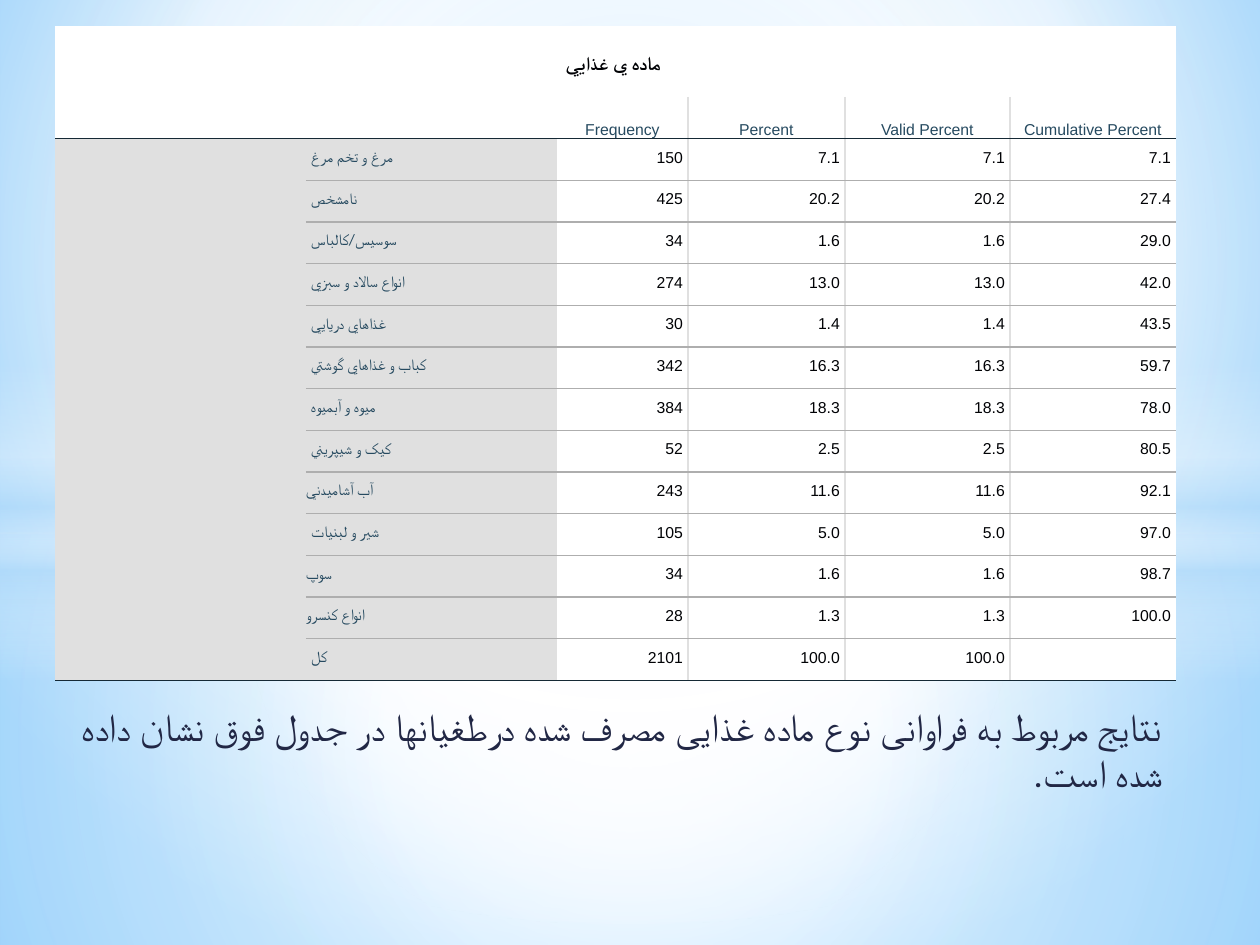
from typing import NamedTuple

from lxml.etree import SubElement
from pptx import Presentation
from pptx.dml.color import RGBColor as Rgb
from pptx.enum.shapes import MSO_SHAPE as Kind
from pptx.enum.text import MSO_ANCHOR as Anchor, MSO_AUTO_SIZE as Fit, PP_ALIGN as Align
from pptx.oxml.ns import qn
from pptx.util import Emu, Pt

INCH = 126  # px to the inch
DARK, GREY, PALE, WHITE = "152935", "AEAEAE", "E0E0E0", "FFFFFF"
BLACK, BLUE, NAVY, SKY = "010205", "264A60", "212745", "B4DCFA"
MID = (50, 50, 50, 50)


class Stop(NamedTuple):
    pos: int
    hue: str
    alpha: int = 100


class Panel(NamedTuple):
    kind: Kind
    top: int
    high: int
    stops: list[Stop]
    focus: tuple | None = MID


class Food(NamedTuple):
    name: str
    count: str
    share: str
    total: str
    inset: int = 5


class Style(NamedTuple):
    font: str
    size: int
    hue: str
    bold: bool = False


TITLE = Style("Calibri", 11, BLACK, True)
HEAD = Style("Arial", 9, BLUE)
LABEL = Style("Calibri", 9, BLUE)
VALUE = Style("Arial", 9, BLACK)
NOTE = Style("Roboto", 22, NAVY)

PANELS = [
    Panel(Kind.RECTANGLE, 533, 412, [Stop(0, WHITE, 91), Stop(37, WHITE, 76), Stop(100, SKY, 79)]),
    Panel(Kind.RECTANGLE, 0, 533, [Stop(0, WHITE, 89), Stop(48, WHITE, 62), Stop(100, SKY, 79)]),
    Panel(Kind.RECTANGLE, 365, 315,
          [Stop(0, WHITE, 0), Stop(29, WHITE, 30), Stop(45, SKY, 40),
           Stop(55, WHITE, 26), Stop(65, SKY, 60), Stop(100, WHITE, 0)], None),
    Panel(Kind.OVAL, 221, 703, [Stop(0, WHITE), Stop(54, WHITE, 0)]),
]
HEADS = ["Frequency", "Percent", "Valid Percent", "Cumulative Percent"]
FOODS = [
    Food("مرغ و تخم مرغ", "150", "7.1", "7.1"),
    Food("نامشخص", "425", "20.2", "27.4"),
    Food("سوسيس/کالباس", "34", "1.6", "29.0"),
    Food("انواع سالاد و سبزي", "274", "13.0", "42.0"),
    Food("غذاهاي دريايي", "30", "1.4", "43.5"),
    Food("کباب و غذاهاي گوشتي", "342", "16.3", "59.7"),
    Food("ميوه و آبميوه", "384", "18.3", "78.0"),
    Food("کيک و شيپريني", "52", "2.5", "80.5"),
    Food("آب آشاميدني", "243", "11.6", "92.1", 0),
    Food("شير و لبنيات", "105", "5.0", "97.0"),
    Food("سوپ", "34", "1.6", "98.7", 0),
    Food("انواع کنسرو", "28", "1.3", "100.0", 0),
    Food("کل", "2101", "100.0", ""),
]
WIDTHS = [251, 251, 131, 157, 165, 166]
LEFT, TOP, HIGH, FIRST = 55, 26, 655, 71
LAST = len(FOODS) + 1


def px(num: float) -> Emu:
    return Emu(round(num * 914400 / INCH))


def color(hue: str) -> Rgb:
    return Rgb.from_string(hue)


def shade(props, stops: list[Stop], focus: tuple | None) -> None:
    """Swap the solid fill for a gradient: round with a focus, else top to bottom."""
    old = props.find(qn("a:solidFill"))
    grad = SubElement(props, qn("a:gradFill"), rotWithShape="1")
    props.replace(old, grad)
    rows = SubElement(grad, qn("a:gsLst"))
    for stop in stops:
        mark = SubElement(rows, qn("a:gs"), pos=str(stop.pos * 1000))
        tint = SubElement(mark, qn("a:srgbClr"), val=stop.hue)
        if stop.alpha < 100:
            SubElement(tint, qn("a:alpha"), val=str(stop.alpha * 1000))
    if focus:
        ring = SubElement(grad, qn("a:path"), {"path": "circle"})
        SubElement(ring, qn("a:fillToRect"),
                   {side: str(num * 1000) for side, num in zip("ltrb", focus)})
    else:
        SubElement(grad, qn("a:lin"), ang="5400000", scaled="0")


def draw(slide, panel: Panel) -> None:
    shape = slide.shapes.add_shape(panel.kind, 0, px(panel.top), px(10 * INCH), px(panel.high))
    shape.shadow.inherit = False
    shape.line.fill.background()
    shape.fill.solid()
    shade(shape.fill._xPr, panel.stops, panel.focus)


def write(para, text: str, style: Style) -> None:
    run = para.add_run()
    run.text = text
    font = run.font
    font.name, font.size, font.bold = style.font, Pt(style.size), style.bold
    font.color.rgb = color(style.hue)
    SubElement(run._r.get_or_add_rPr(), qn("a:cs"), typeface=style.font)


def edges(row: int, col: int) -> dict[str, str | None]:
    """Line colours of a cell: dark under the heads and at the foot, grey between foods."""
    body = row > 1
    under = DARK if row in (1, LAST) or (body and col == 0) else GREY
    over = DARK if row == 2 else GREY if body and col else None
    return {
        "L": PALE if row and col > 2 else None,
        "R": PALE if row and 2 <= col < 5 else None,
        "T": over,
        "B": under if row else None,
    }


def dress(cell, row: int, col: int) -> None:
    props = cell._tc.get_or_add_tcPr()
    for side, hue in edges(row, col).items():
        line = SubElement(props, qn(f"a:ln{side}"), w="12700")
        if hue:
            SubElement(SubElement(line, qn("a:solidFill")), qn("a:srgbClr"), val=hue)
        else:
            SubElement(line, qn("a:noFill"))
    cell.fill.solid()
    cell.fill.fore_color.rgb = color(PALE if row > 1 and col < 2 else WHITE)
    cell.margin_left = cell.margin_right = cell.margin_top = cell.margin_bottom = 0
    cell.text_frame.paragraphs[0].line_spacing = Pt(16)


def enter(cell, text: str, style: Style, align: Align, anchor=Anchor.TOP, inset: int = 5) -> None:
    cell.vertical_anchor = anchor
    para = cell.text_frame.paragraphs[0]
    para.alignment = align
    props = para._p.get_or_add_pPr()
    for side in ("marL", "marR"):
        props.set(side, str(px(inset)))
    if text:
        write(para, text, style)


def chart(slide) -> None:
    frame = slide.shapes.add_table(LAST + 1, len(WIDTHS), px(LEFT), px(TOP), px(sum(WIDTHS)), px(HIGH))
    table = frame.table
    table.first_row = table.horz_banding = False
    for col, wide in zip(table.columns, WIDTHS):
        col.width = px(wide)
    for num, line in enumerate(table.rows):
        line.height = px((HIGH - FIRST) / LAST if num else FIRST)
    for row in range(LAST + 1):
        for col in range(len(WIDTHS)):
            dress(table.cell(row, col), row, col)
    for start, end in (((0, 0), (0, 5)), ((1, 0), (1, 1)), ((2, 0), (LAST, 0))):
        table.cell(*start).merge(table.cell(*end))

    # Title, heads and foods
    enter(table.cell(0, 0), "ماده ي غذايي ", TITLE, Align.CENTER, Anchor.MIDDLE)
    for col, text in enumerate(HEADS, 2):
        enter(table.cell(1, col), text, HEAD, Align.CENTER, Anchor.BOTTOM)
    for row, food in enumerate(FOODS, 2):
        enter(table.cell(row, 1), food.name, LABEL, Align.LEFT, inset=food.inset)
        for col, text in enumerate((food.count, food.share, food.share, food.total), 2):
            enter(table.cell(row, col), text, VALUE, Align.RIGHT)


def remark(slide, box) -> None:
    slide.shapes._spTree.append(box._element)  # in front of the panels
    box.left, box.top, box.width, box.height = map(px, (44, 697, 1131, 121))
    frame = box.text_frame
    frame.word_wrap, frame.auto_size, frame.vertical_anchor = True, Fit.NONE, Anchor.TOP
    para = frame.paragraphs[0]
    para.alignment, para.space_after = Align.RIGHT, Pt(3)
    para._p.get_or_add_pPr().set("rtl", "1")
    write(para, "نتایج مربوط به فراوانی نوع ماده غذایی مصرف شده درطغیانها در جدول فوق نشان داده شده است. ", NOTE)


def main() -> None:
    deck = Presentation()
    deck.slide_width, deck.slide_height = px(10 * INCH), px(945)
    slide = deck.slides.add_slide(deck.slide_layouts[0])
    title, box = slide.placeholders
    title._element.getparent().remove(title._element)

    # Backdrop
    back = slide.background.fill
    back.solid()
    shade(back._xPr, [Stop(0, "9ED5FF"), Stop(60, WHITE), Stop(100, "5BB9FF")], (20, 10, 20, 60))
    for panel in PANELS:
        draw(slide, panel)

    remark(slide, box)
    chart(slide)
    deck.save("out.pptx")


if __name__ == "__main__":
    main()
